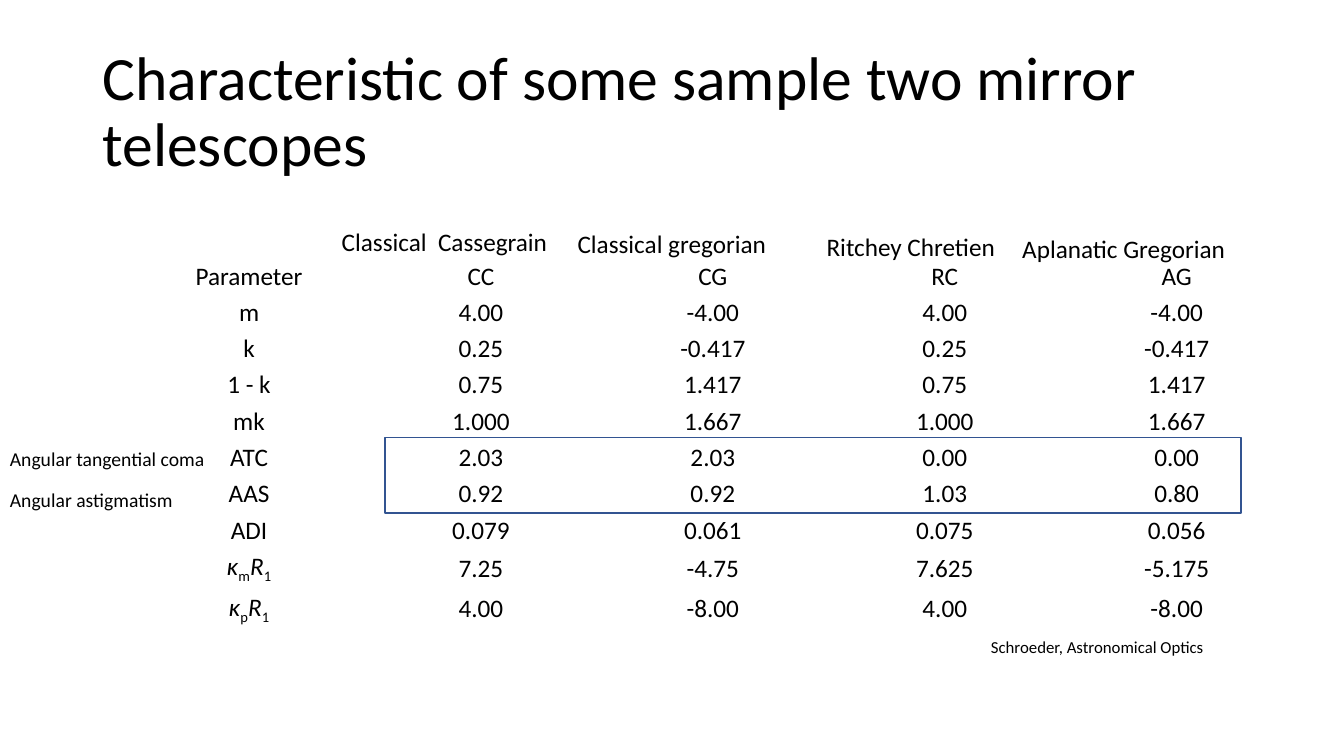
"""Build a slide comparing the characteristics of two mirror telescopes."""
import dataclasses

import pptx
import pptx.dml.color
import pptx.enum.shapes
import pptx.enum.text
import pptx.util

Inches = pptx.util.Inches
FONT = "Calibri"
BLACK = "000000"
WHITE = "FFFFFF"
OUTLINE = "325491"
COLUMN_WIDTH = 2.3
ROW_HEIGHT = 0.36
CELL_MARGIN = 0.03


@dataclasses.dataclass(frozen=True)
class Span:
    text: str
    italic: bool = False
    subscript: bool = False


@dataclasses.dataclass(frozen=True)
class Label:
    text: str
    left: float
    top: float
    width: float
    height: float
    size: int
    wrap: bool = True


@dataclasses.dataclass(frozen=True)
class Parameter:
    name: tuple[Span, ...]
    values: tuple[str, ...]


def curvature(index: str) -> tuple[Span, ...]:
    """Return the spans of a normalised curvature symbol."""
    return (Span("κ", italic=True), Span(index, subscript=True),
            Span("R", italic=True), Span("1", subscript=True))


TITLE = Label("Characteristic of some sample two mirror telescopes", 0.92, 0.4, 11.5, 1.45, 44)

LABELS = (
    Label("Classical  Cassegrain", 3.29, 2.2, 2.71, 0.4, 18),
    Label("Classical gregorian", 5.63, 2.22, 2.86, 0.4, 18),
    Label("Ritchey Chretien", 8.1, 2.25, 1.94, 0.4, 18),
    Label("Aplanatic Gregorian", 10.04, 2.27, 2.58, 0.4, 18),
    Label("Angular tangential coma", 0, 4.38, 2.46, 0.34, 14),
    Label("Angular astigmatism", 0, 4.79, 1.84, 0.34, 14, wrap=False),
    Label("Schroeder, Astronomical Optics", 9.73, 6.27, 2.33, 0.3, 12),
)

PARAMETERS = (
    Parameter((Span("Parameter"),), ("CC", "CG", "RC", "AG")),
    Parameter((Span("m"),), ("4.00", "-4.00", "4.00", "-4.00")),
    Parameter((Span("k"),), ("0.25", "-0.417", "0.25", "-0.417")),
    Parameter((Span("1 - k"),), ("0.75", "1.417", "0.75", "1.417")),
    Parameter((Span("mk"),), ("1.000", "1.667", "1.000", "1.667")),
    Parameter((Span("ATC"),), ("2.03", "2.03", "0.00", "0.00")),
    Parameter((Span("AAS"),), ("0.92", "0.92", "1.03", "0.80")),
    Parameter((Span("ADI"),), ("0.079", "0.061", "0.075", "0.056")),
    Parameter(curvature("m"), ("7.25", "-4.75", "7.625", "-5.175")),
    Parameter(curvature("p"), ("4.00", "-8.00", "4.00", "-8.00")),
)


def color(value: str) -> pptx.dml.color.RGBColor:
    """Turn a hex string into a colour."""
    return pptx.dml.color.RGBColor.from_string(value)


def add_span(para, span: Span, size: int) -> None:
    """Append one formatted run to a paragraph."""
    run = para.add_run()
    run.text = span.text
    run.font.name = FONT
    run.font.size = pptx.util.Pt(size)
    run.font.color.rgb = color(BLACK)
    if span.italic:
        run.font.italic = True
    if span.subscript:
        run.font._element.set("baseline", "-25000")


def add_label(page, label: Label):
    """Add a text box and return its text frame."""
    box = page.shapes.add_textbox(Inches(label.left), Inches(label.top),
                                  Inches(label.width), Inches(label.height))
    frame = box.text_frame
    frame.word_wrap = label.wrap
    add_span(frame.paragraphs[0], Span(label.text), label.size)
    return frame


def add_title(page) -> None:
    """Add the slide title."""
    frame = add_label(page, TITLE)
    frame.vertical_anchor = pptx.enum.text.MSO_ANCHOR.MIDDLE
    frame.paragraphs[0].line_spacing = 0.9


def fill_cell(cell, spans: tuple[Span, ...]) -> None:
    """Write centred text into a white table cell."""
    cell.fill.solid()
    cell.fill.fore_color.rgb = color(WHITE)
    cell.vertical_anchor = pptx.enum.text.MSO_ANCHOR.MIDDLE
    cell.margin_left = cell.margin_right = Inches(CELL_MARGIN)
    cell.margin_top = cell.margin_bottom = Inches(CELL_MARGIN)
    para = cell.text_frame.paragraphs[0]
    para.alignment = pptx.enum.text.PP_ALIGN.CENTER
    for span in spans:
        add_span(para, span, 18)


def add_parameter_table(page) -> None:
    """Add the table of telescope parameters."""
    rows = len(PARAMETERS)
    columns = 1 + len(PARAMETERS[0].values)
    table = page.shapes.add_table(rows, columns, Inches(1.32), Inches(2.56),
                                  Inches(columns * COLUMN_WIDTH),
                                  Inches(rows * ROW_HEIGHT)).table
    table.first_row = False
    table.horz_banding = False
    for row, parameter in enumerate(PARAMETERS):
        cells = (parameter.name, *((Span(value),) for value in parameter.values))
        for column, spans in enumerate(cells):
            fill_cell(table.cell(row, column), spans)


def add_aberration_frame(page) -> None:
    """Outline the coma and astigmatism rows."""
    frame = page.shapes.add_shape(pptx.enum.shapes.MSO_SHAPE.RECTANGLE,
                                  Inches(3.82), Inches(4.34), Inches(8.49), Inches(0.75))
    frame.shadow.inherit = False
    frame.fill.background()
    frame.line.color.rgb = color(OUTLINE)
    frame.line.width = pptx.util.Pt(1)


def main() -> None:
    """Build and save the deck."""
    deck = pptx.Presentation()
    deck.slide_width = Inches(13.33)
    deck.slide_height = Inches(7.5)
    page = deck.slides.add_slide(deck.slide_layouts[6])
    add_title(page)
    add_parameter_table(page)
    for label in LABELS:
        add_label(page, label)
    add_aberration_frame(page)
    deck.save("out.pptx")


if __name__ == "__main__":
    main()
